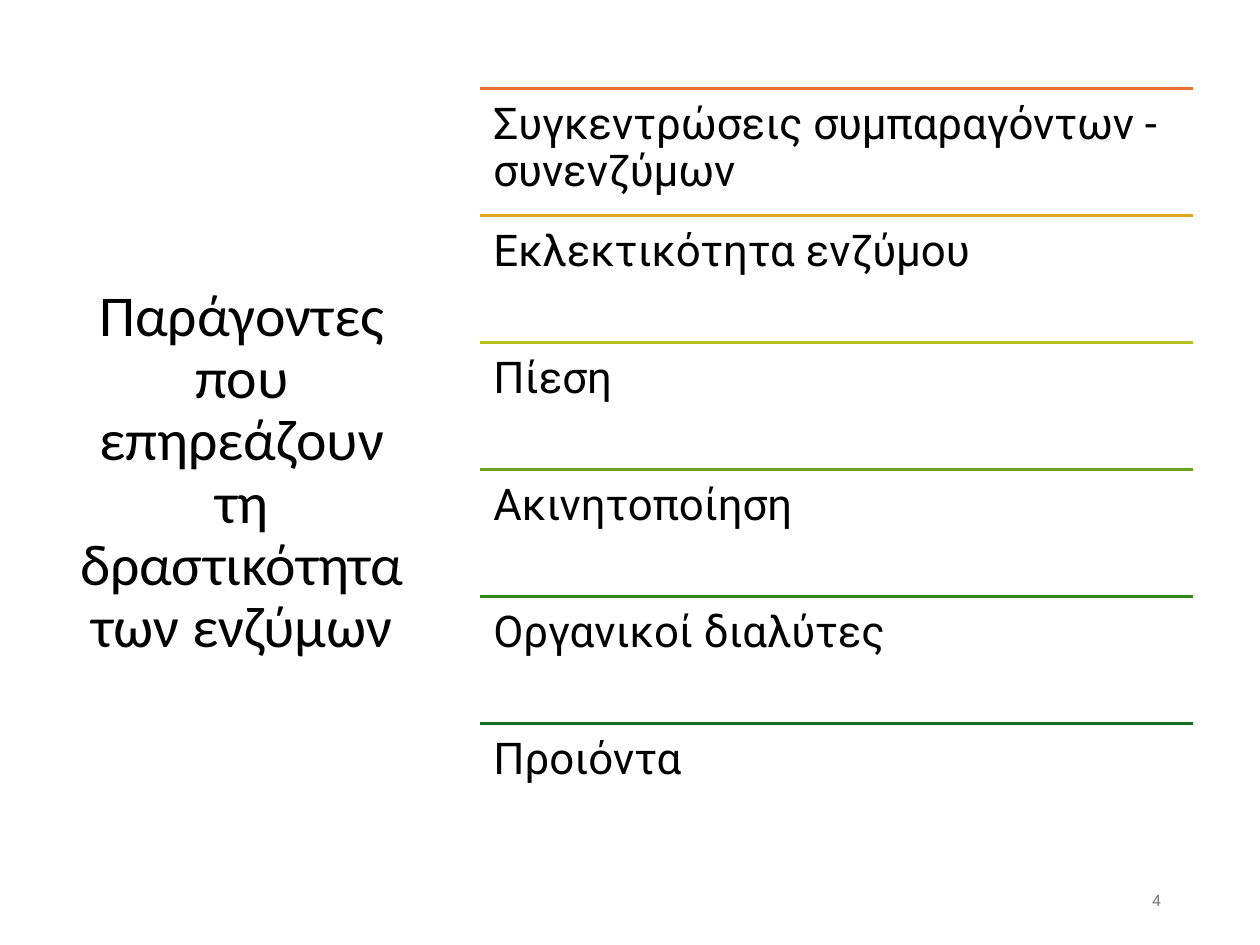
from lxml import etree
from pptx import Presentation
from pptx.dml.color import RGBColor
from pptx.enum.shapes import MSO_CONNECTOR
from pptx.enum.text import MSO_ANCHOR, MSO_AUTO_SIZE, PP_ALIGN
from pptx.oxml.ns import qn
from pptx.util import Pt

LINE = MSO_CONNECTOR.STRAIGHT
MIDDLE, TOP = MSO_ANCHOR.MIDDLE, MSO_ANCHOR.TOP
LEFT, CENTER, RIGHT = PP_ALIGN.LEFT, PP_ALIGN.CENTER, PP_ALIGN.RIGHT
FIXED = MSO_AUTO_SIZE.NONE


def tint(color, code):
    color.rgb = RGBColor.from_string(code)


def write(box, text, face, size, code, align, anchor):
    frame = box.text_frame
    frame.word_wrap = True
    frame.auto_size = FIXED
    frame.vertical_anchor = anchor
    frame.text = text
    para = frame.paragraphs[0]
    para.alignment = align
    para.line_spacing = 0.9
    para.font.name = face
    para.font.size = Pt(size)
    tint(para.font.color, code)
    return frame


deck = Presentation()
deck.slide_width, deck.slide_height = Pt(720), Pt(540)
slide = deck.slides.add_slide(deck.slide_layouts[5])
shapes = slide.shapes

# Title on the left
title = shapes.title
title.left, title.top = Pt(37.4), Pt(50.4)
title.width, title.height = Pt(201.6), Pt(440)
write(title, "Παράγοντες που επηρεάζουν τη δραστικότητα των ενζύμων",
      "Calibri", 33, "000000", CENTER, MIDDLE)

# Ruled list of factors
rows = [
    ("Συγκεντρώσεις συμπαραγόντων - συνενζύμων", "E97132"),
    ("Εκλεκτικότητα ενζύμου", "E0A61D"),
    ("Πίεση", "B7C11E"),
    ("Ακινητοποίηση", "6BA31D"),
    ("Οργανικοί διαλύτες", "34861C"),
    ("Προιόντα", "196B24"),
]
x, y, wide, step = 274.5, 50.4, 407.5, 72.6
for i, (text, code) in enumerate(rows):
    top = Pt(y + i * step)
    rule = shapes.add_connector(LINE, Pt(x), top, Pt(x + wide), top)
    rule.line.width = Pt(1.5)
    tint(rule.line.color, code)
    etree.SubElement(rule._element.spPr, qn("a:effectLst"))

    box = shapes.add_textbox(Pt(x), top, Pt(wide), Pt(step))
    frame = write(box, text, "Roboto", 25, "000000", LEFT, TOP)
    frame.margin_left = frame.margin_right = Pt(7.5)
    frame.margin_top = frame.margin_bottom = Pt(7.5)

# Slide number
num = shapes.add_textbox(Pt(508.5), Pt(500.5), Pt(162), Pt(28.8))
write(num, "4", "Roboto", 9, "797979", RIGHT, MIDDLE)
num.text_frame.paragraphs[0].space_after = Pt(6)

deck.save("out.pptx")
